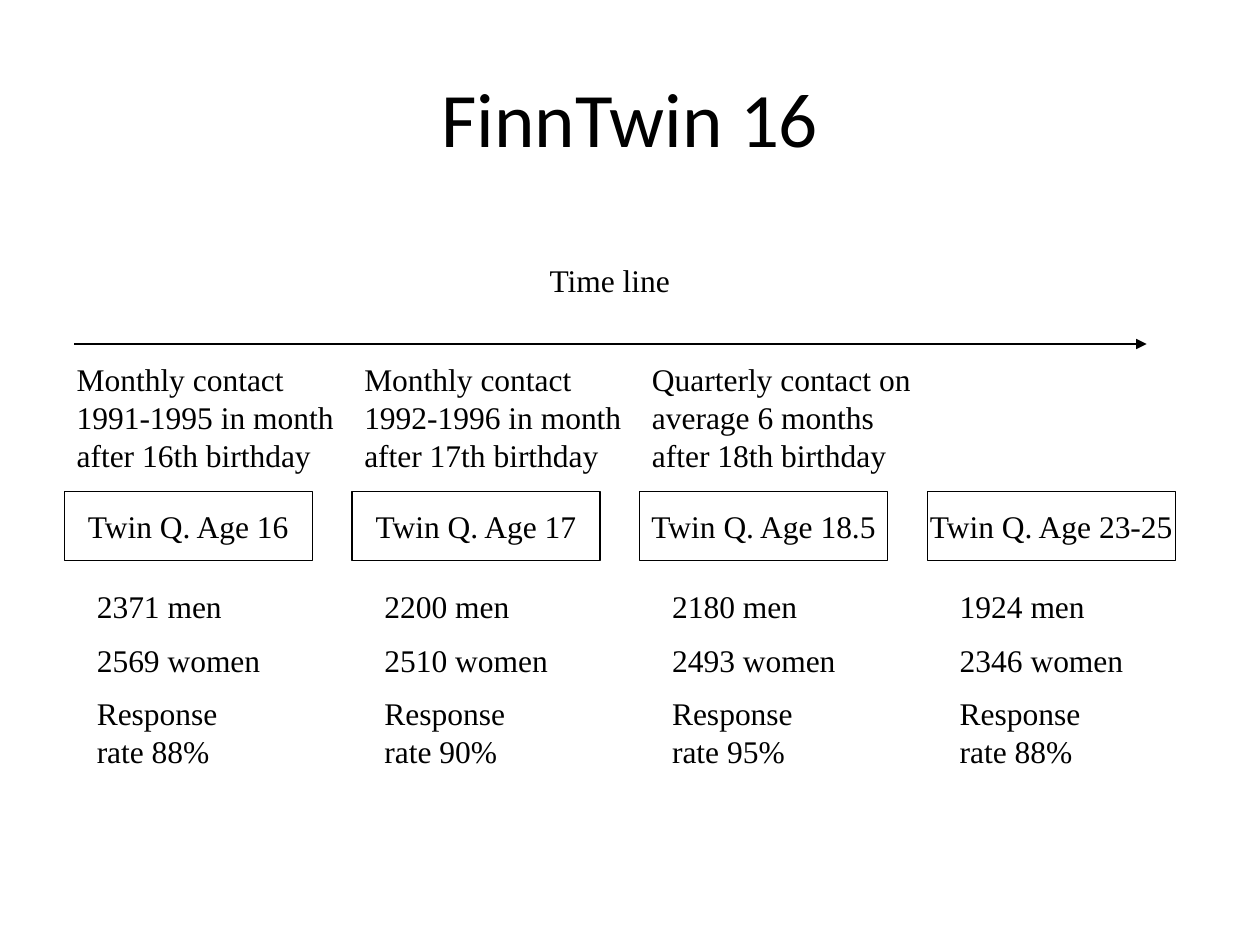
from lxml import etree
from pptx import Presentation
from pptx import util as u
from pptx.dml.color import RGBColor
from pptx.enum import shapes, text
from pptx.oxml.ns import qn

BLACK, WHITE = "000000", "FFFFFF"
BODY_FONT, TITLE_FONT = "Times New Roman", "Calibri"

# Column grid, in inches
LEFT, PITCH = 0.51, 2.283
CONTACT_TOP, BOX_TOP, COUNT_TOP = 2.81, 3.9, 4.61
COUNT_INDENT = 0.16

# Questionnaire, contact schedule, men, women, response rate
WAVES = [
    ("Twin Q. Age 16", "Monthly contact 1991-1995 in month after 16th birthday",
     2371, 2569, 88),
    ("Twin Q. Age 17", "Monthly contact 1992-1996 in month after 17th birthday",
     2200, 2510, 90),
    ("Twin Q. Age 18.5", "Quarterly contact on average 6 months after 18th birthday",
     2180, 2493, 95),
    ("Twin Q. Age 23-25", None, 1924, 2346, 88),
]


def color(value):
    return RGBColor.from_string(value)


def write(frame, lines, size=18, font=BODY_FONT, align=text.PP_ALIGN.LEFT,
          anchor=text.MSO_ANCHOR.TOP, wrap=True, gap=9):
    """Fill a text frame, one paragraph per line, with a gap between them."""
    frame.word_wrap = wrap
    frame.vertical_anchor = anchor
    for index, line in enumerate(lines):
        para = frame.add_paragraph() if index else frame.paragraphs[0]
        para.alignment = align
        para.space_before = u.Pt(gap if index else 0)
        span = para.add_run()
        span.text = line
        span.font.size = u.Pt(size)
        span.font.name = font
        span.font.color.rgb = color(BLACK)


def add_text(page, lines, left, top, width, height, **style):
    box = page.shapes.add_textbox(*map(u.Inches, (left, top, width, height)))
    write(box.text_frame, lines, **style)


def add_box(page, label, left, top, width, height):
    box = page.shapes.add_shape(shapes.MSO_SHAPE.RECTANGLE,
                                *map(u.Inches, (left, top, width, height)))
    box.shadow.inherit = False
    box.fill.solid()
    box.fill.fore_color.rgb = color(WHITE)
    box.line.color.rgb = color(BLACK)
    box.line.width = u.Pt(0.75)
    write(box.text_frame, [label], align=text.PP_ALIGN.CENTER,
          anchor=text.MSO_ANCHOR.MIDDLE, wrap=False)


def add_arrow(page, start, end, top):
    arrow = page.shapes.add_connector(shapes.MSO_CONNECTOR.STRAIGHT,
                                      *map(u.Inches, (start, top, end, top)))
    arrow.line.color.rgb = color(BLACK)
    arrow.line.width = u.Pt(0.75)
    etree.SubElement(arrow.line._get_or_add_ln(), qn("a:tailEnd"), type="triangle")
    etree.SubElement(arrow._element.spPr, qn("a:effectLst"))


def add_title(page, label):
    title = page.shapes.title
    title.left, title.top, title.width, title.height = map(
        u.Inches, (0.5, 0.3, 9, 1.25))
    write(title.text_frame, [label], size=44, font=TITLE_FONT,
          align=text.PP_ALIGN.CENTER, anchor=text.MSO_ANCHOR.MIDDLE)


def add_wave(page, left, label, contact, men, women, rate):
    if contact:
        add_text(page, [contact], left, CONTACT_TOP, 2.36, 1)
    add_box(page, label, left, BOX_TOP, 1.97, 0.55)
    counts = [f"{men} men", f"{women} women", f"Response rate {rate}%"]
    add_text(page, counts, left + COUNT_INDENT, COUNT_TOP, 1.5, 2.06)


def main():
    deck = Presentation()
    deck.slide_width, deck.slide_height = u.Inches(10), u.Inches(7.5)
    page = deck.slides.add_slide(deck.slide_layouts[5])
    add_title(page, "FinnTwin 16")

    # Time line
    add_text(page, ["Time line"], 2.24, 2.02, 5.2, 0.4, align=text.PP_ALIGN.CENTER)
    add_arrow(page, 0.59, 9.1, 2.73)

    # One column per questionnaire wave
    for column, wave in enumerate(WAVES):
        add_wave(page, LEFT + column * PITCH, *wave)

    deck.save("out.pptx")


if __name__ == "__main__":
    main()
